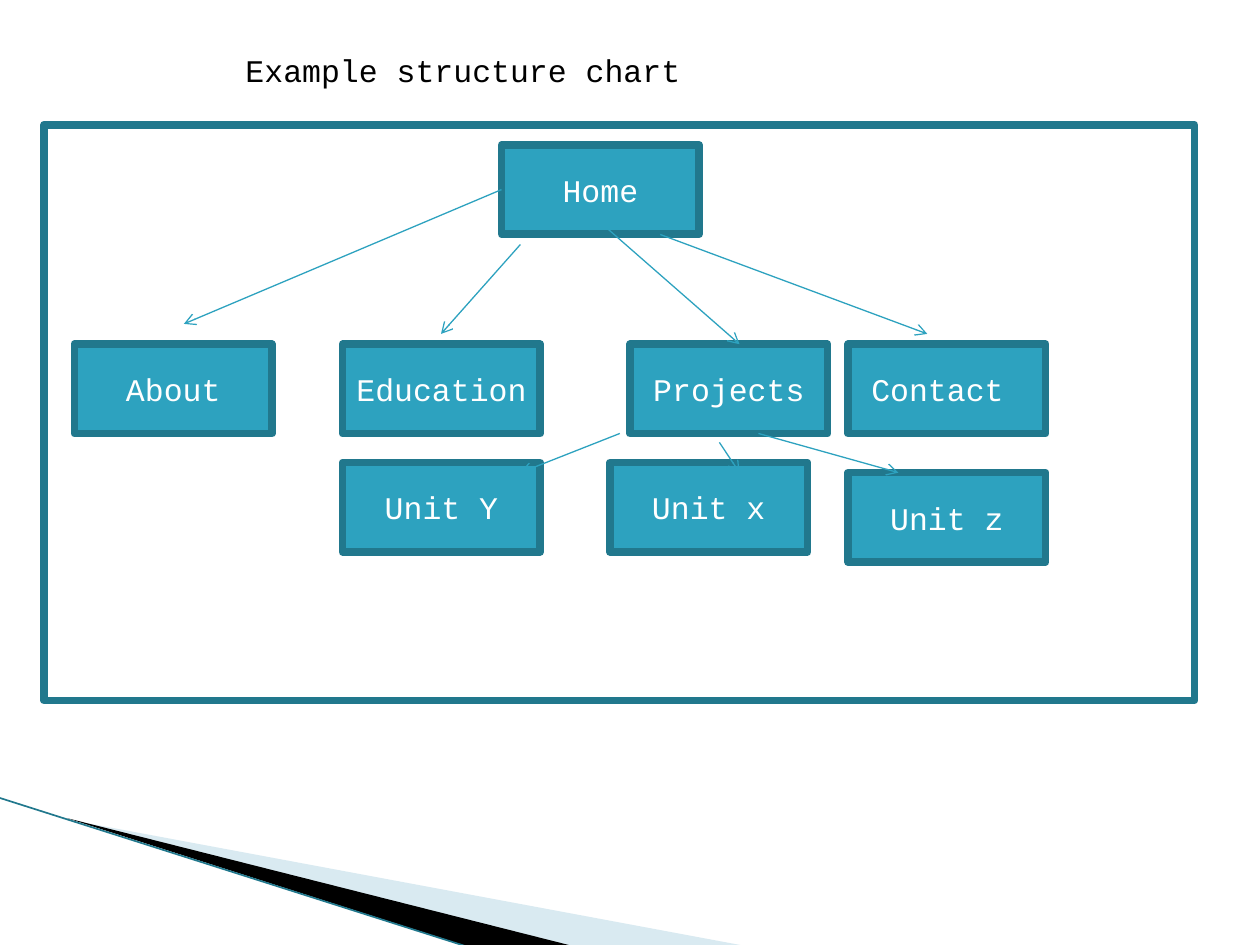
from lxml import etree
from pptx import Presentation
from pptx.dml.color import RGBColor
from pptx.enum.shapes import MSO_CONNECTOR, MSO_SHAPE
from pptx.enum.text import MSO_ANCHOR, PP_ALIGN
from pptx.oxml.ns import qn
from pptx.util import Pt

RECTANGLE = MSO_SHAPE.RECTANGLE
STRAIGHT = MSO_CONNECTOR.STRAIGHT
CENTER = PP_ALIGN.CENTER
MIDDLE = MSO_ANCHOR.MIDDLE
LEFT_SIDE = 1

WHITE = RGBColor(0xFF, 0xFF, 0xFF)
BLACK = RGBColor(0x00, 0x00, 0x00)
TEAL = RGBColor(0x2D, 0xA2, 0xBF)
DARK_TEAL = RGBColor(0x21, 0x78, 0x8D)
PALE_TEAL = RGBColor(0xD9, 0xEA, 0xF1)

FONT = "Courier New"
FONT_SIZE = 18
BORDER = 4.33
NODE_WIDTH, NODE_HEIGHT = 113, 51.1

# Node positions, measured from the frame's top left corner
PAGE_ROW, UNIT_ROW = 125.4, 193
EDUCATION_X, CONTACT_X = 170.6, 459.4
NODES = {
    "Home": (261.4, 11.5),
    "Unit z": (CONTACT_X, 198.8),
    "Unit Y": (EDUCATION_X, UNIT_ROW),
    "Unit x": (323.3, UNIT_ROW),
    "Contact ": (CONTACT_X, PAGE_ROW),
    "Projects": (334.8, PAGE_ROW),
    "Education": (EDUCATION_X, PAGE_ROW),
    "About": (17.3, PAGE_ROW),
}
ABOUT_ARROW = (261.4, 37.05, 79.9, 113.8)
ARROWS = [
    (312.5, 51.1, 397.4, 125.4),
    (352.1, 62.7, 504.7, 119.5),
    (272.2, 68.4, 226.8, 119.5),
    (329, 176.4, 272.2, 198.8),
    (385.9, 181.5, 397.4, 198.8),
    (408.2, 176.4, 488.2, 198.8),
]


def style_text(para, color):
    for span in para.runs:
        span.font.name = FONT
        span.font.size = Pt(FONT_SIZE)
        span.font.color.rgb = color


def add_rectangle(page, left, top, width, height, fill):
    box = page.shapes.add_shape(RECTANGLE, Pt(left), Pt(top), Pt(width), Pt(height))
    box.shadow.inherit = False
    box.fill.solid()
    box.fill.fore_color.rgb = fill
    box.line.color.rgb = DARK_TEAL
    box.line.width = Pt(BORDER)
    return box


def add_node(page, left, top, label):
    node = add_rectangle(page, left, top, NODE_WIDTH, NODE_HEIGHT, TEAL)
    frame = node.text_frame
    frame.text = label
    frame.word_wrap = True
    frame.vertical_anchor = MIDDLE
    frame.paragraphs[0].alignment = CENTER
    style_text(frame.paragraphs[0], WHITE)
    return node


def add_line(page, x1, y1, x2, y2, color, width):
    line = page.shapes.add_connector(STRAIGHT, Pt(x1), Pt(y1), Pt(x2), Pt(y2))
    line.line.color.rgb = color
    line.line.width = Pt(width)
    etree.SubElement(line._element.spPr, qn("a:effectLst"))
    return line


def add_arrow(page, left, top, ends):
    x1, y1, x2, y2 = ends
    arrow = add_line(page, left + x1, top + y1, left + x2, top + y2, TEAL, 0.75)
    outline = arrow.line._get_or_add_ln()
    etree.SubElement(outline, qn("a:tailEnd"), type="arrow")
    return arrow


def add_wedge(page, left, top, points, color):
    corners = [(Pt(left + x), Pt(top + y)) for x, y in points]
    builder = page.shapes.build_freeform(*corners[0], scale=1.0)
    builder.add_line_segments(corners[1:], close=True)
    wedge = builder.convert_to_shape()
    wedge.shadow.inherit = False
    wedge.fill.solid()
    wedge.fill.fore_color.rgb = color
    wedge.line.fill.background()


def add_corner_decoration(page, left, top, width, height):
    # Pale wedge, black wedge and the thin line along their lower edge
    add_wedge(page, left, top, [(39.6, 12.5), (width, height), (328.3, height)], PALE_TEAL)
    add_wedge(page, left, top, [(38.2, 11.5), (329, height), (267.8, height)], BLACK)
    add_line(page, left - 0.7, top - 0.2, left + 267.1, top + height, DARK_TEAL, 0.95)


def add_title(page, left, top, width, height):
    box = page.shapes.add_textbox(Pt(left), Pt(top), Pt(width), Pt(height))
    box.text_frame.word_wrap = True
    box.text_frame.text = "Example structure chart"
    style_text(box.text_frame.paragraphs[0], BLACK)


def add_structure_chart(page, left, top, width, height):
    # Frame and labelled boxes
    add_rectangle(page, left, top, width, height, WHITE)
    nodes = {label: add_node(page, left + x, top + y, label)
             for label, (x, y) in NODES.items()}
    # Arrows between levels
    for ends in ARROWS:
        add_arrow(page, left, top, ends)
    about_arrow = add_arrow(page, left, top, ABOUT_ARROW)
    about_arrow.begin_connect(nodes["Home"], LEFT_SIDE)


def main():
    deck = Presentation()
    deck.slide_width, deck.slide_height = Pt(720), Pt(540)
    page = deck.slides.add_slide(deck.slide_layouts[6])
    add_corner_decoration(page, 0, 456, 428.4, 85)
    add_structure_chart(page, 25.2, 71.3, 657.4, 329)
    add_title(page, 133.2, 25.9, 408.2, 28.8)
    deck.save("out.pptx")


if __name__ == "__main__":
    main()
